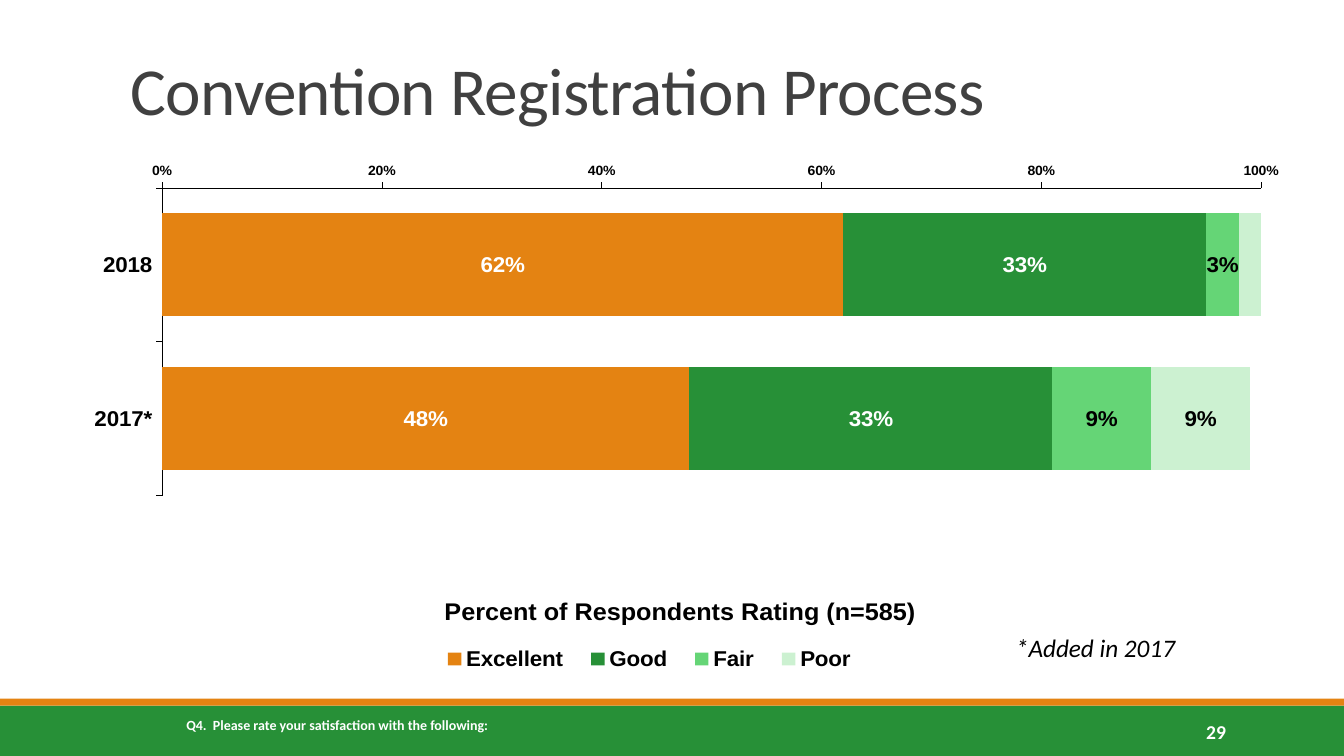
from typing import NamedTuple

from lxml import etree
from pptx import Presentation
from pptx import util as u
from pptx.chart import data as chart_data
from pptx.dml import color
from pptx.enum import chart as ch, shapes, text
from pptx.oxml import ns

GREEN, ORANGE, WHITE, BLACK = "279037", "E48312", "FFFFFF", "000000"


class Band(NamedTuple):
    top: float
    height: float
    fill: str


class Rating(NamedTuple):
    name: str
    shares: tuple[float, ...]
    fill: str
    label_color: str


BANDS = [Band(504, 36, GREEN), Band(499, 5, ORANGE)]
RATINGS = [
    Rating("Excellent", (0.62, 0.48), ORANGE, WHITE),
    Rating("Good", (0.33, 0.33), GREEN, WHITE),
    Rating("Fair", (0.03, 0.09), "65D576", BLACK),
    Rating("Poor", (0.02, 0.09), "CCF1D1", BLACK),
]


def paint(fill, value: str) -> None:
    fill.solid()
    fill.fore_color.rgb = color.RGBColor.from_string(value)


def style(font, size: float, value: str = BLACK, face: str = "Arial",
          bold: bool = True, italic: bool = False) -> None:
    font.size, font.name, font.bold, font.italic = u.Pt(size), face, bold, italic
    paint(font.fill, value)


def add_band(slide, band: Band) -> None:
    bar = slide.shapes.add_shape(shapes.MSO_SHAPE.RECTANGLE, 0, u.Pt(band.top),
                                 u.Pt(960), u.Pt(band.height))
    bar.shadow.inherit = False
    bar.line.fill.background()
    paint(bar.fill, band.fill)


def add_text(slide, words: str, box: tuple[float, ...], size: float, value: str,
             bold: bool = False, italic: bool = False, align=text.PP_ALIGN.LEFT,
             anchor=text.MSO_ANCHOR.TOP, line_spacing: float = 1.0,
             tracking: float = 0) -> None:
    frame = slide.shapes.add_textbox(*map(u.Pt, box)).text_frame
    frame.word_wrap = True
    frame.vertical_anchor = anchor
    paragraph = frame.paragraphs[0]
    paragraph.alignment = align
    paragraph.line_spacing = line_spacing
    run = paragraph.add_run()
    run.text = words
    style(run.font, size, value, "Calibri", bold, italic)
    if tracking:
        run.font._element.set("spc", str(round(tracking * 100)))


def place(part, index: int, inner: bool = False, **fractions: float) -> None:
    for old in part.findall(ns.qn("c:layout")):
        part.remove(old)
    layout = etree.Element(ns.qn("c:layout"))
    manual = etree.SubElement(layout, ns.qn("c:manualLayout"))
    settings = {"layoutTarget": "inner"} if inner else {}
    settings |= {"xMode": "edge", "yMode": "edge"} | fractions
    for tag, value in settings.items():
        etree.SubElement(manual, ns.qn(f"c:{tag}")).set("val", str(value))
    part.insert(index, layout)


def remove_label(labels, point: int) -> None:
    label = etree.Element(ns.qn("c:dLbl"))
    etree.SubElement(label, ns.qn("c:idx")).set("val", str(point))
    etree.SubElement(label, ns.qn("c:delete")).set("val", "1")
    labels._element.insert(0, label)


def format_axis(axis, size: float) -> None:
    axis.has_major_gridlines = False
    axis.major_tick_mark = ch.XL_TICK_MARK.OUTSIDE
    axis.minor_tick_mark = ch.XL_TICK_MARK.NONE
    axis.format.line.width = u.Pt(0.37)
    paint(axis.format.line.fill, BLACK)
    style(axis.tick_labels.font, size)


def add_ratings_chart(slide) -> None:
    ratings = chart_data.CategoryChartData(number_format="0%")
    ratings.categories = ["2018", "2017*"]
    for rating in RATINGS:
        ratings.add_series(rating.name, rating.shares)
    chart = slide.shapes.add_chart(
        ch.XL_CHART_TYPE.BAR_STACKED, u.Pt(15.1), u.Pt(116.6), u.Pt(906.5),
        u.Pt(391.7), ratings).chart
    style(chart.font, 14)
    chart.has_title = False

    years, percent = chart.category_axis, chart.value_axis
    format_axis(years, 16)
    years.reverse_order = True
    years.crosses = ch.XL_AXIS_CROSSES.MAXIMUM
    format_axis(percent, 10)
    percent.minimum_scale, percent.maximum_scale, percent.major_unit = 0, 1, 0.2
    percent.tick_labels.number_format = "0%"
    percent.tick_labels.number_format_is_linked = False
    caption = percent.axis_title.text_frame.paragraphs[0].add_run()
    caption.text = "Percent of Respondents Rating (n=585)"
    style(caption.font, 18)

    chart.has_legend = True
    chart.legend.position = ch.XL_LEGEND_POSITION.BOTTOM
    chart.legend.include_in_layout = False
    style(chart.legend.font, 16)

    plot = chart.plots[0]
    plot.gap_width, plot.overlap, plot.vary_by_categories = 50, 100, False
    for series, rating in zip(plot.series, RATINGS):
        paint(series.format.fill, rating.fill)
        labels = series.data_labels
        labels.show_value = True
        labels.number_format = "0%"
        labels.number_format_is_linked = False
        style(labels.font, 16, rating.label_color)
    remove_label(plot.series[-1].data_labels, 0)

    plot_area = chart._chartSpace.find(".//" + ns.qn("c:plotArea"))
    place(plot_area, 0, inner=True, x=0.111, y=0.003, w=0.866, h=0.586)
    place(percent.axis_title._element, 1, x=0.33, y=0.77)
    place(chart.legend._element, 1, x=0.32, y=0.86, w=0.35, h=0.08)


def main() -> None:
    deck = Presentation()
    deck.slide_width, deck.slide_height = u.Pt(960), u.Pt(540)
    slide = deck.slides.add_slide(deck.slide_layouts[6])
    for band in BANDS:
        add_band(slide, band)
    add_text(slide, "Convention Registration Process", (86.4, 22.3, 792, 73.4), 48,
             "404040", anchor=text.MSO_ANCHOR.BOTTOM, line_spacing=0.85, tracking=-0.5)
    add_text(slide, "29", (779.8, 508.3, 103, 28.8), 14, WHITE, bold=True,
             align=text.PP_ALIGN.RIGHT, anchor=text.MSO_ANCHOR.MIDDLE)
    add_ratings_chart(slide)
    add_text(slide, "*Added in 2017", (718.6, 447.8, 240, 28.8), 18, BLACK, italic=True)
    add_text(slide, "Q4.  Please rate your satisfaction with the following:",
             (126, 508.3, 462.2, 19.4), 10, WHITE, bold=True)
    deck.save("out.pptx")


if __name__ == "__main__":
    main()
